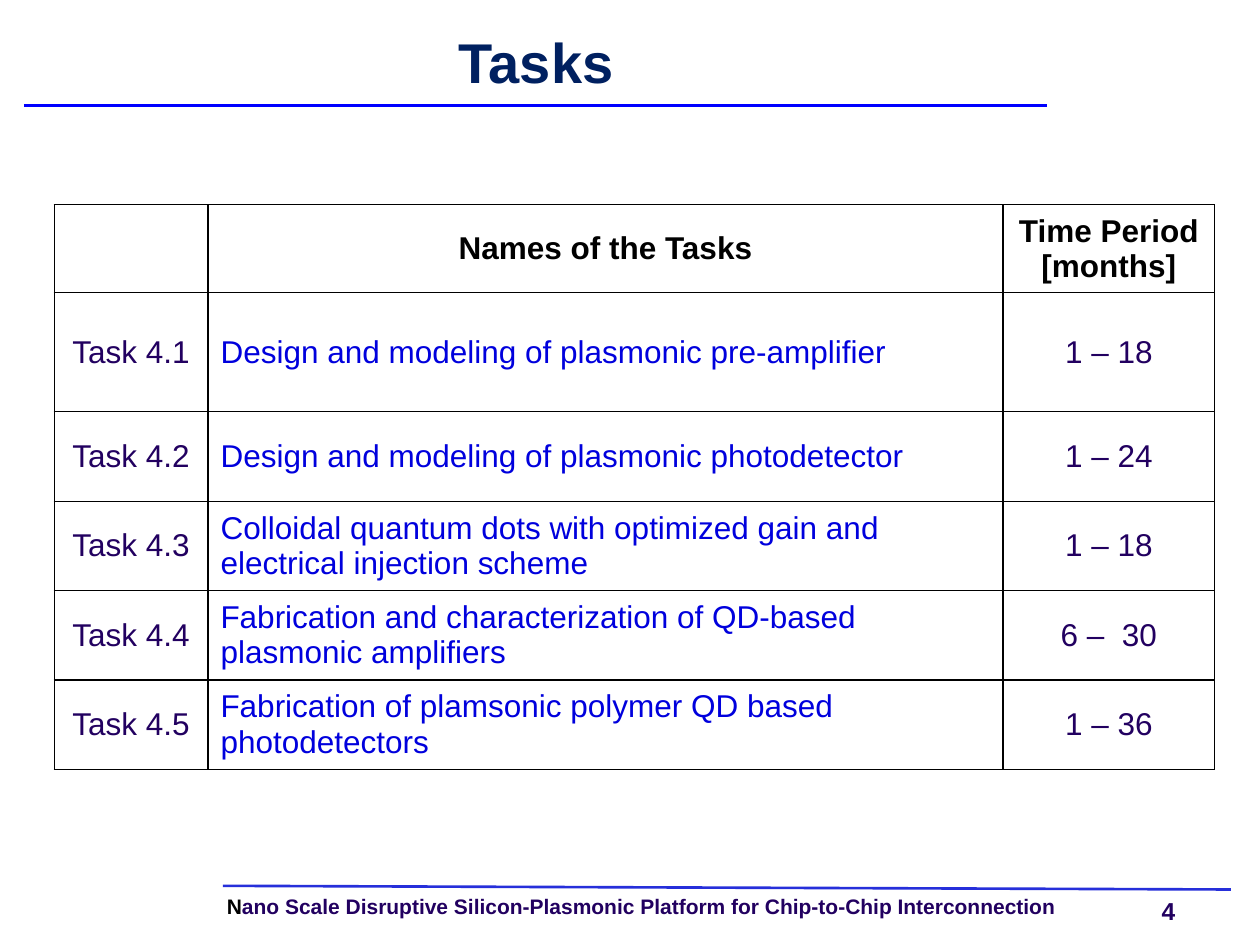
from lxml import etree
from pptx import Presentation
from pptx.dml.color import RGBColor
from pptx.enum import shapes, text
from pptx.oxml.ns import qn
from pptx.util import Pt

FONT = "Arial"
BLACK, PURPLE, NAVY = "000000", "220060", "002060"
TASK_BLUE, TITLE_BLUE, FOOTER_BLUE = "0000DD", "0000FF", "262FDA"
LEFT, CENTER = text.PP_ALIGN.LEFT, text.PP_ALIGN.CENTER

COLUMN_WIDTHS = [87.84, 454.32, 120.96]
ROW_HEIGHTS = [47.5, 68] + [51.1] * 4
HEADER = ["", "Names of the Tasks", "Time Period [months]"]
TASKS = [
    ("Task 4.1", "Design and modeling of plasmonic pre-amplifier", "1 – 18"),
    ("Task 4.2", "Design and modeling of plasmonic photodetector", "1 – 24"),
    ("Task 4.3", "Colloidal quantum dots with optimized gain and electrical injection scheme", "1 – 18"),
    ("Task 4.4", "Fabrication and characterization of QD-based plasmonic amplifiers", "6 –  30"),
    ("Task 4.5", "Fabrication of plamsonic polymer QD based photodetectors", "1 – 36"),
]


def color(value):
    return RGBColor.from_string(value)


def style_font(font, size, value, bold):
    font.name, font.size, font.bold = FONT, Pt(size), bold
    font.color.rgb = color(value)


def clear_margins(frame):
    frame.margin_left = frame.margin_top = frame.margin_right = frame.margin_bottom = 0
    frame.word_wrap = True


def add_title(page, words):
    title = page.shapes.title
    title.left, title.top, title.width, title.height = Pt(14.4), Pt(14.4), Pt(584), Pt(48)
    frame = title.text_frame
    clear_margins(frame)
    frame.auto_size = text.MSO_AUTO_SIZE.NONE
    frame.vertical_anchor = text.MSO_ANCHOR.MIDDLE
    frame.text = words
    para = frame.paragraphs[0]
    para.alignment, para.line_spacing = CENTER, Pt(32)
    style_font(para.runs[0].font, 32, NAVY, True)


def add_label(page, left, top, width, height, size, spans):
    """Add one bold line made of (words, colour) spans."""
    box = page.shapes.add_textbox(Pt(left), Pt(top), Pt(width), Pt(height))
    clear_margins(box.text_frame)
    para = box.text_frame.paragraphs[0]
    for words, value in spans:
        span = para.add_run()
        span.text = words
        style_font(span.font, size, value, True)
    return para


def add_rule(page, x1, y1, x2, y2, value):
    rule = page.shapes.add_connector(
        shapes.MSO_CONNECTOR.STRAIGHT, Pt(x1), Pt(y1), Pt(x2), Pt(y2))
    rule.line.color.rgb = color(value)
    rule.line.width = Pt(1.5)
    etree.SubElement(rule._element.spPr, qn("a:effectLst"))


def add_borders(cell):
    properties = cell._tc.get_or_add_tcPr()
    for index, side in enumerate(("lnL", "lnR", "lnT", "lnB")):
        line = etree.Element(qn(f"a:{side}"), w=str(Pt(0.75)))
        fill = etree.SubElement(line, qn("a:solidFill"))
        etree.SubElement(fill, qn("a:srgbClr"), val=BLACK)
        properties.insert(index, line)


def fill_cell(cell, words, value, bold, alignment):
    cell.fill.background()
    add_borders(cell)
    cell.vertical_anchor = text.MSO_ANCHOR.MIDDLE
    cell.text_frame.text = words
    para = cell.text_frame.paragraphs[0]
    para.alignment = alignment
    style_font(para.font, 18, value, bold)
    for span in para.runs:
        style_font(span.font, 18, value, bold)


def add_task_table(page):
    frame = page.shapes.add_table(
        len(TASKS) + 1, len(HEADER), Pt(31), Pt(116.9),
        Pt(sum(COLUMN_WIDTHS)), Pt(sum(ROW_HEIGHTS)))
    table = frame.table
    table.horz_banding = False
    for column, width in zip(table.columns, COLUMN_WIDTHS):
        column.width = Pt(width)
    for row, height in zip(table.rows, ROW_HEIGHTS):
        row.height = Pt(height)
    for cell, words in zip(table.rows[0].cells, HEADER):
        fill_cell(cell, words, BLACK, True, CENTER)
    for index, (label, name, period) in enumerate(TASKS, 1):
        fill_cell(table.cell(index, 0), label, PURPLE, False, CENTER)
        fill_cell(table.cell(index, 1), name, TASK_BLUE, False, LEFT)
        fill_cell(table.cell(index, 2), period, PURPLE, False, CENTER)


def add_footer(page):
    para = add_label(page, 129.6, 512, 514, 13, 12, [
        ("N", BLACK),
        ("ano Scale Disruptive Silicon-Plasmonic Platform for Chip-to-Chip Interconnection", PURPLE)])
    para.line_spacing = 0.9
    add_label(page, 663.8, 512, 28.8, 16.5, 14, [("4", PURPLE)])
    add_rule(page, 127.4, 506.2, 703.4, 508.3, FOOTER_BLUE)


def main():
    deck = Presentation()
    deck.slide_width, deck.slide_height = Pt(720), Pt(540)
    page = deck.slides.add_slide(deck.slide_layouts[5])
    add_footer(page)
    add_rule(page, 13.7, 60.3, 598.3, 60.3, TITLE_BLUE)
    add_title(page, "Tasks")
    add_task_table(page)
    deck.save("out.pptx")


if __name__ == "__main__":
    main()
